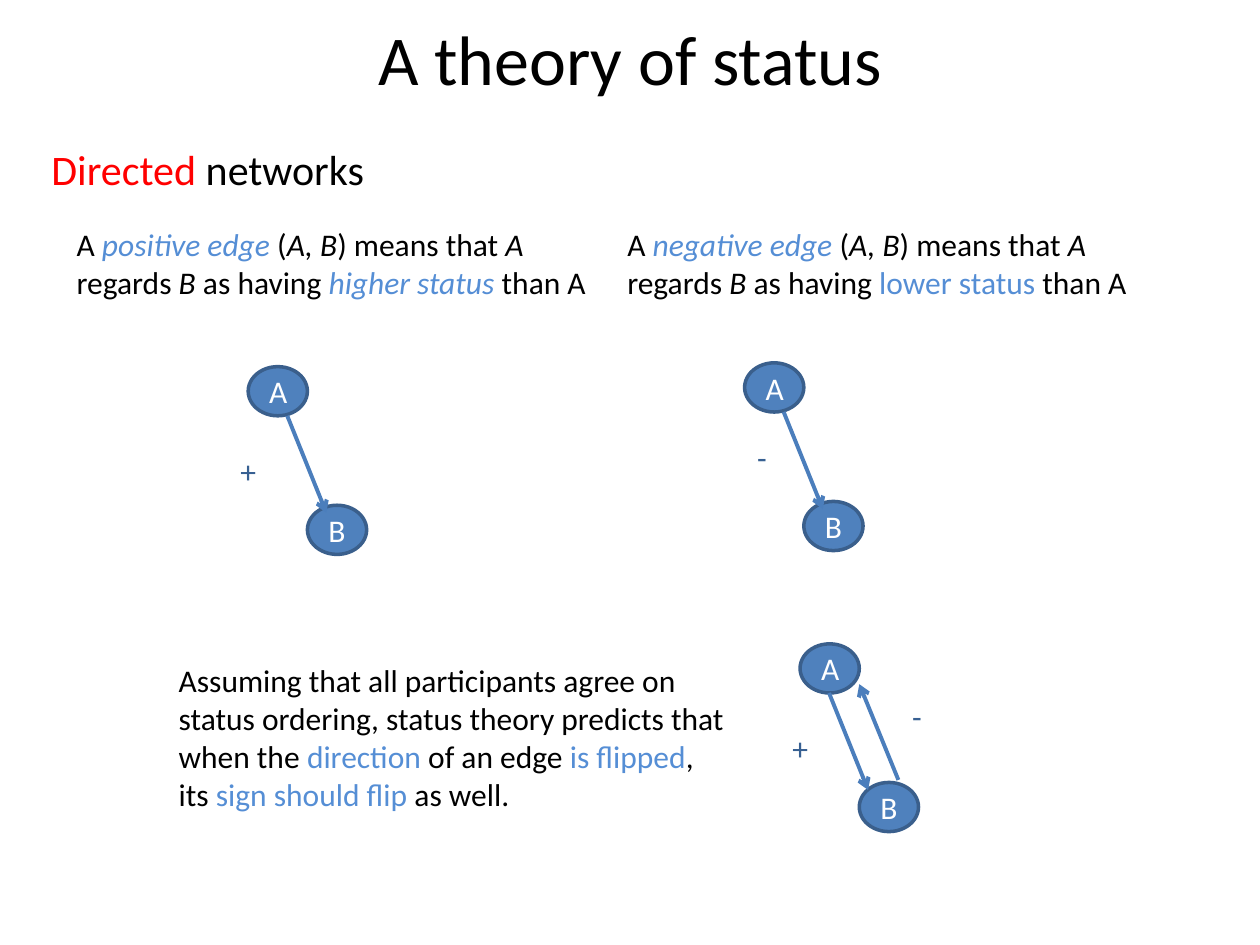
from pptx import Presentation
from pptx.dml.color import RGBColor
from pptx.enum import shapes, text
from pptx.oxml.ns import qn
from pptx.util import Inches, Pt
from lxml import etree

BLACK = RGBColor(0x00, 0x00, 0x00)
WHITE = RGBColor(0xFF, 0xFF, 0xFF)
RED = RGBColor(0xFF, 0x00, 0x00)
SKY = RGBColor(0x55, 0x8E, 0xD5)
NAVY = RGBColor(0x37, 0x60, 0x92)
BLUE = RGBColor(0x4F, 0x81, 0xBD)
RIM = RGBColor(0x3A, 0x5F, 0x8C)
EDGE = RGBColor(0x4B, 0x7E, 0xBC)
FONT = "Calibri"


def write(shape, paras, size=18):
    frame = shape.text_frame
    frame.word_wrap = True
    for i, parts in enumerate(paras):
        para = frame.add_paragraph() if i else frame.paragraphs[0]
        for words, color, slant in parts:
            run = para.add_run()
            run.text = words
            run.font.name = FONT
            run.font.size = Pt(size)
            run.font.color.rgb = color
            run.font.italic = slant


def arrow(group, x1, y1, x2, y2):
    line = group.shapes.add_connector(
        shapes.MSO_CONNECTOR.STRAIGHT, Inches(x1), Inches(y1), Inches(x2), Inches(y2))
    line.line.color.rgb = EDGE
    line.line.width = Pt(2.25)
    etree.SubElement(line.line._get_or_add_ln(), qn("a:tailEnd"), type="arrow")
    etree.SubElement(line._element.spPr, qn("a:effectLst"))


deck = Presentation()
deck.slide_width, deck.slide_height = Inches(10), Inches(7.5)
slide = deck.slides.add_slide(deck.slide_layouts[5])

title = slide.shapes.title
title.left, title.top = Inches(0.67), Inches(0.07)
title.width, title.height = Inches(8.66), Inches(0.77)
title.text_frame.text = "A theory of status"
title.text_frame.vertical_anchor = text.MSO_ANCHOR.TOP
para = title.text_frame.paragraphs[0]
para.alignment = text.PP_ALIGN.CENTER
font = para.runs[0].font
font.name, font.size, font.color.rgb = FONT, Pt(40), BLACK

notes = [
    (0.31, 1.09, 6.69, 0.5, 24,
     [[("Directed", RED, False), (" networks", BLACK, False)]]),
    (1.32, 5.2, 4.57, 1.31, 18,
     [[("Assuming that all participants agree on status ordering, "
        "status theory predicts that when the ", BLACK, False),
       ("direction ", SKY, False), ("of an edge ", BLACK, False),
       ("is flipped", SKY, False), (",", BLACK, False)],
      [("its ", BLACK, False), ("sign should flip ", SKY, False),
       ("as well.", BLACK, False)]]),
]
for left, sign, level, slant in [(0.51, "positive", "higher", True),
                                 (4.88, "negative", "lower", False)]:
    notes.append((left, 1.74, 4.25, 0.71, 18, [[
        ("A ", BLACK, False), (sign + " edge ", SKY, True),
        ("(", BLACK, False), ("A, B", BLACK, True),
        (") means that ", BLACK, False), ("A ", BLACK, True),
        ("regards ", BLACK, False), ("B ", BLACK, True),
        ("as having ", BLACK, False), (level + " status ", SKY, slant),
        ("than A", BLACK, False)]]))
for left, top, width, height, size, paras in notes:
    box = slide.shapes.add_textbox(Inches(left), Inches(top), Inches(width), Inches(height))
    write(box, paras, size)

graphs = [
    (5.91, 2.88, [(0.31, 0.39, 0.62, 1.16)], [("-", 0, 0.55)]),
    (1.97, 2.91, [(0.31, 0.39, 0.62, 1.16)], [("+", -0.16, 0.63)]),
    (6.35, 5.11, [(0.23, 0.39, 0.54, 1.16), (0.78, 1.08, 0.47, 0.32)],
     [("+", -0.16, 0.63), ("-", 0.79, 0.37)]),
]
for x, y, edges, signs in graphs:
    group = slide.shapes.add_group_shape()
    for name, dx, dy in [("A", 0, 0), ("B", 0.47, 1.1)]:
        node = group.shapes.add_shape(
            shapes.MSO_SHAPE.OVAL, Inches(x + dx), Inches(y + dy), Inches(0.47), Inches(0.39))
        node.shadow.inherit = False
        node.fill.solid()
        node.fill.fore_color.rgb = BLUE
        node.line.color.rgb = RIM
        node.line.width = Pt(2)
        write(node, [[(name, WHITE, False)]])
        node.text_frame.vertical_anchor = text.MSO_ANCHOR.MIDDLE
        node.text_frame.paragraphs[0].alignment = text.PP_ALIGN.CENTER
    for x1, y1, x2, y2 in edges:
        arrow(group, x + x1, y + y1, x + x2, y + y2)
    for sign, dx, dy in signs:
        mark = group.shapes.add_textbox(
            Inches(x + dx), Inches(y + dy), Inches(0.31), Inches(0.4))
        write(mark, [[(sign, NAVY, False)]])

deck.save("out.pptx")
